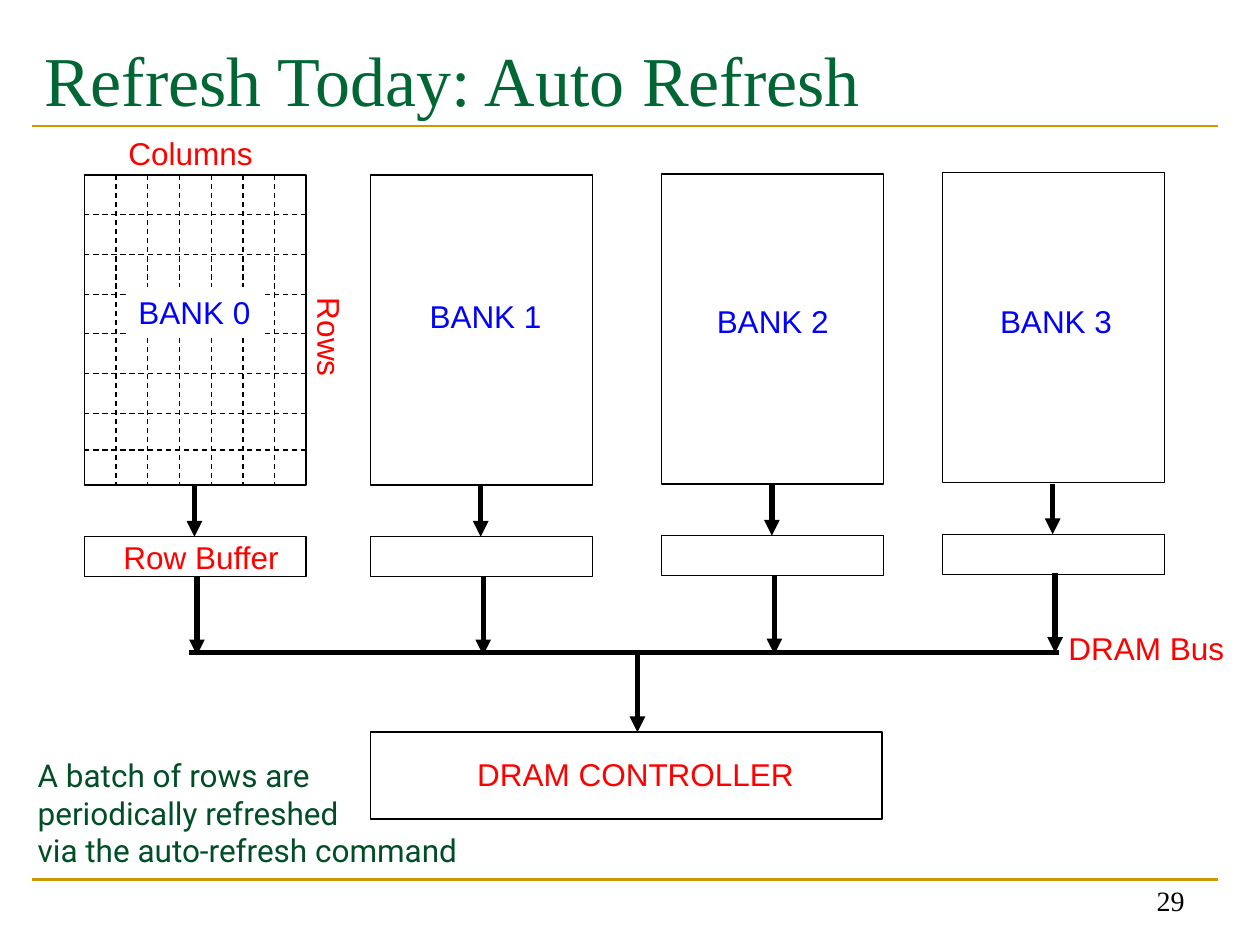
from lxml import etree
from pptx import Presentation
from pptx.dml.color import RGBColor
from pptx.enum.dml import MSO_LINE_DASH_STYLE as Dash
from pptx.enum.shapes import MSO_CONNECTOR_TYPE as Connector, MSO_SHAPE as Shape
from pptx.enum.text import MSO_ANCHOR as Anchor, PP_ALIGN as Align
from pptx.oxml.ns import qn
from pptx.util import Cm, Pt

COLORS = {
    "title": "006633", "rule": "CC9900", "label": "FF0000",
    "bank": "0000FF", "note": "004D26", "ink": "000000", "paper": "FFFFFF",
}
BANK_WIDTH, BANK_HEIGHT, BANK_TOP = 4.47, 6.25, 3.53
BUFFER_TOP, BUFFER_HEIGHT, BUS_Y = 10.82, 0.81, 13.16
# Bank left, vertical shift, label left, label top
BANKS = [
    (1.70, 0, 2.54, 5.79),
    (7.47, 0, 8.41, 5.87),
    (13.34, -0.02, 14.20, 5.97),
    (19.00, -0.05, 19.91, 5.97),
]


def color(name):
    return RGBColor.from_string(COLORS[name])


def write(shape, lines, ink, size=18, font="Arial", align=Align.LEFT, **frame_format):
    frame = shape.text_frame
    frame.text = "\n".join(lines)
    for name, value in {"word_wrap": False, **frame_format}.items():
        setattr(frame, name, value)
    for paragraph in frame.paragraphs:
        paragraph.alignment = align
        for name, value in {"name": font, "size": Pt(size), "bold": False}.items():
            setattr(paragraph.font, name, value)
        paragraph.font.color.rgb = color(ink)


def add_label(slide, text, left, top, width, height=1.02, ink="label", **text_format):
    box = slide.shapes.add_textbox(Cm(left), Cm(top), Cm(width), Cm(height))
    write(box, text.split("\n"), ink, **text_format)
    return box


def add_box(slide, left, top, width, height):
    box = slide.shapes.add_shape(
        Shape.RECTANGLE, Cm(left), Cm(top), Cm(width), Cm(height))
    box.shadow.inherit = False
    box.fill.background()
    box.line.color.rgb = color("ink")
    box.line.width = Pt(0.75)
    return box


def add_bank_label(slide, text, left, top):
    box = add_box(slide, left, top, 2.79, 1.02)
    box.fill.solid()
    box.fill.fore_color.rgb = color("paper")
    box.line.fill.background()
    write(box, [text], "bank", vertical_anchor=Anchor.TOP)


def add_line(slide, x1, y1, x2, y2, ink="ink", width=3, dash=None, arrow=False):
    connector = slide.shapes.add_connector(
        Connector.STRAIGHT, Cm(x1), Cm(y1), Cm(x2), Cm(y2))
    line = connector.line
    line.color.rgb = color(ink)
    line.width = Pt(width)
    if dash:
        line.dash_style = dash
    properties = connector._element.spPr
    if arrow:
        outline = properties.find(qn("a:ln"))
        etree.SubElement(outline, qn("a:tailEnd"), type="triangle")
    etree.SubElement(properties, qn("a:effectLst"))


def add_title(slide, text):
    title = slide.shapes.title
    place = {"left": 0.64, "top": 0.43, "width": 23.93, "height": 2.97}
    for name, value in place.items():
        setattr(title, name, Cm(value))
    write(title, [text], "title", 40, "Times New Roman", word_wrap=True,
          vertical_anchor=Anchor.TOP, margin_top=Cm(0.3))


def add_cell_grid(slide, left, top):
    grid = {"width": 0.75, "dash": Dash.DASH}
    row_lines = [top + 0.8 * row for row in range(1, 7)] + [9.07]
    for y in row_lines:
        add_line(slide, left, y, left + BANK_WIDTH, y, **grid)
    for column in range(1, 7):
        x = left + 0.64 * column
        add_line(slide, x, top, x, top + BANK_HEIGHT, **grid)


def add_bank(slide, left, shift):
    top, buffer_top = BANK_TOP + shift, BUFFER_TOP + shift
    add_box(slide, left, top, BANK_WIDTH, BANK_HEIGHT)
    add_box(slide, left, buffer_top, BANK_WIDTH, BUFFER_HEIGHT)
    # Bank to row buffer, then row buffer to bus
    x = left + 2.22
    add_line(slide, x, buffer_top - 1.02, x, buffer_top, arrow=True)
    x += 0.05
    add_line(slide, x, buffer_top + 0.79, x, buffer_top + 2.39, arrow=True)


def main():
    presentation = Presentation()
    presentation.slide_width, presentation.slide_height = Cm(25.4), Cm(19.05)
    slide = presentation.slides.add_slide(presentation.slide_layouts[5])

    # Title, rules and page number
    for y in (17.73, 2.54):
        add_line(slide, 0.64, y, 24.56, y, ink="rule", width=1.5)
    add_title(slide, "Refresh Today: Auto Refresh")
    add_label(slide, "29", 18.21, 17.35, 5.92, 1.27, ink="ink", size=16,
              font="Times New Roman", align=Align.RIGHT, word_wrap=True,
              vertical_anchor=Anchor.BOTTOM)

    # Banks with their row buffers
    for left, shift, _, _ in BANKS:
        add_bank(slide, left, shift)
    add_cell_grid(slide, BANKS[0][0], BANK_TOP)
    for number, (_, _, left, top) in enumerate(BANKS):
        add_bank_label(slide, f"BANK {number}", left, top)

    # Bus and controller
    add_line(slide, 3.81, BUS_Y, 21.34, BUS_Y)
    add_line(slide, 12.85, BUS_Y, 12.85, 14.76, arrow=True)
    add_box(slide, 7.47, 14.76, 10.31, 1.75)

    # Labels
    add_label(slide, "Columns", 2.34, 2.57, 3.02)
    add_label(slide, "Rows", 5.59, 6.30, 2.11).rotation = 90
    add_label(slide, "Row Buffer", 2.24, 10.72, 3.66)
    add_label(slide, "DRAM CONTROLLER", 9.37, 15.09, 6.96)
    add_label(slide, "DRAM Bus", 21.29, 12.55, 3.68)
    add_label(slide, "A batch of rows are\nperiodically refreshed\n"
              "via the auto-refresh command", 0.51, 15.11, 9.4, 2.57,
              ink="note", font="Roboto", word_wrap=True)

    presentation.save("out.pptx")


if __name__ == "__main__":
    main()
